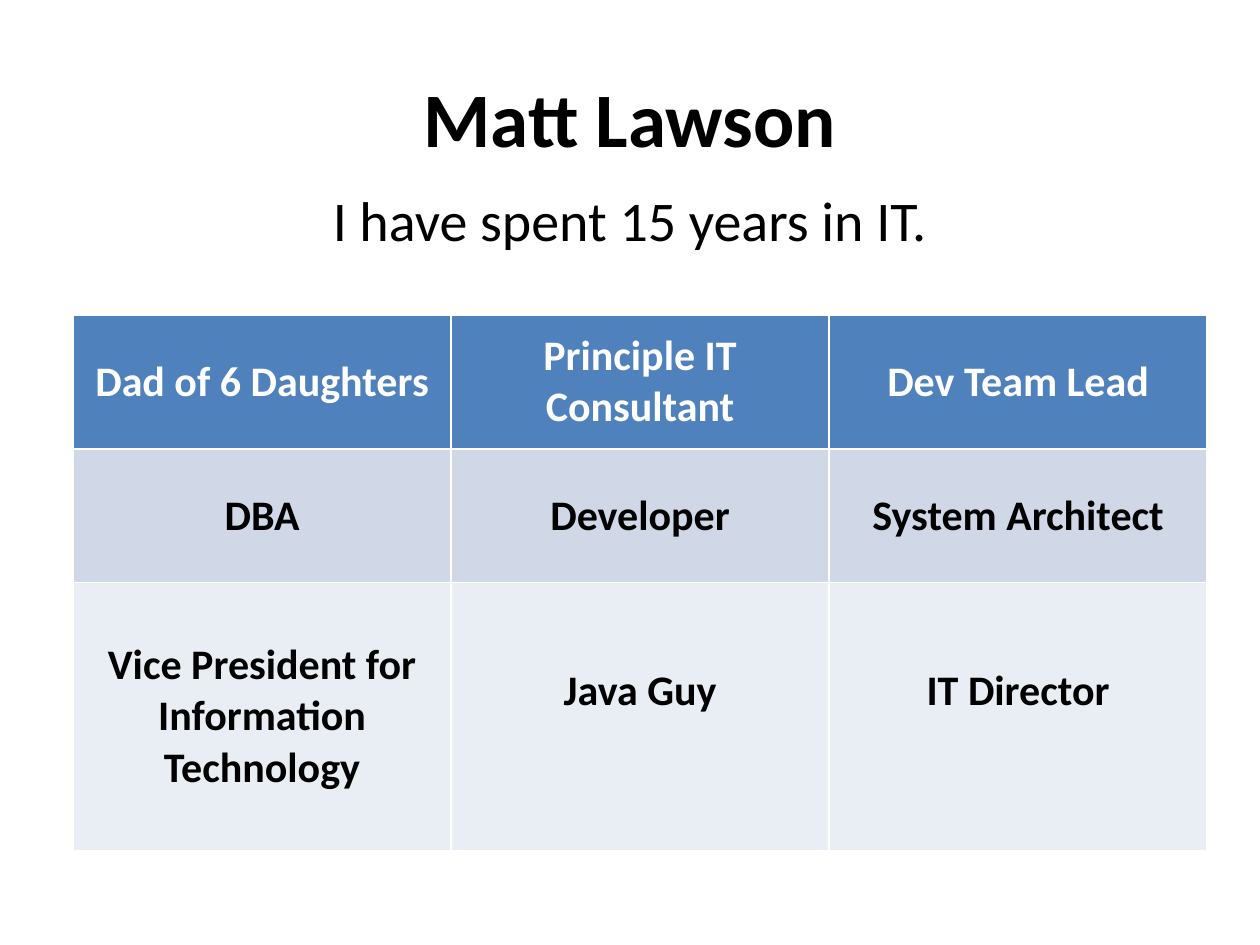
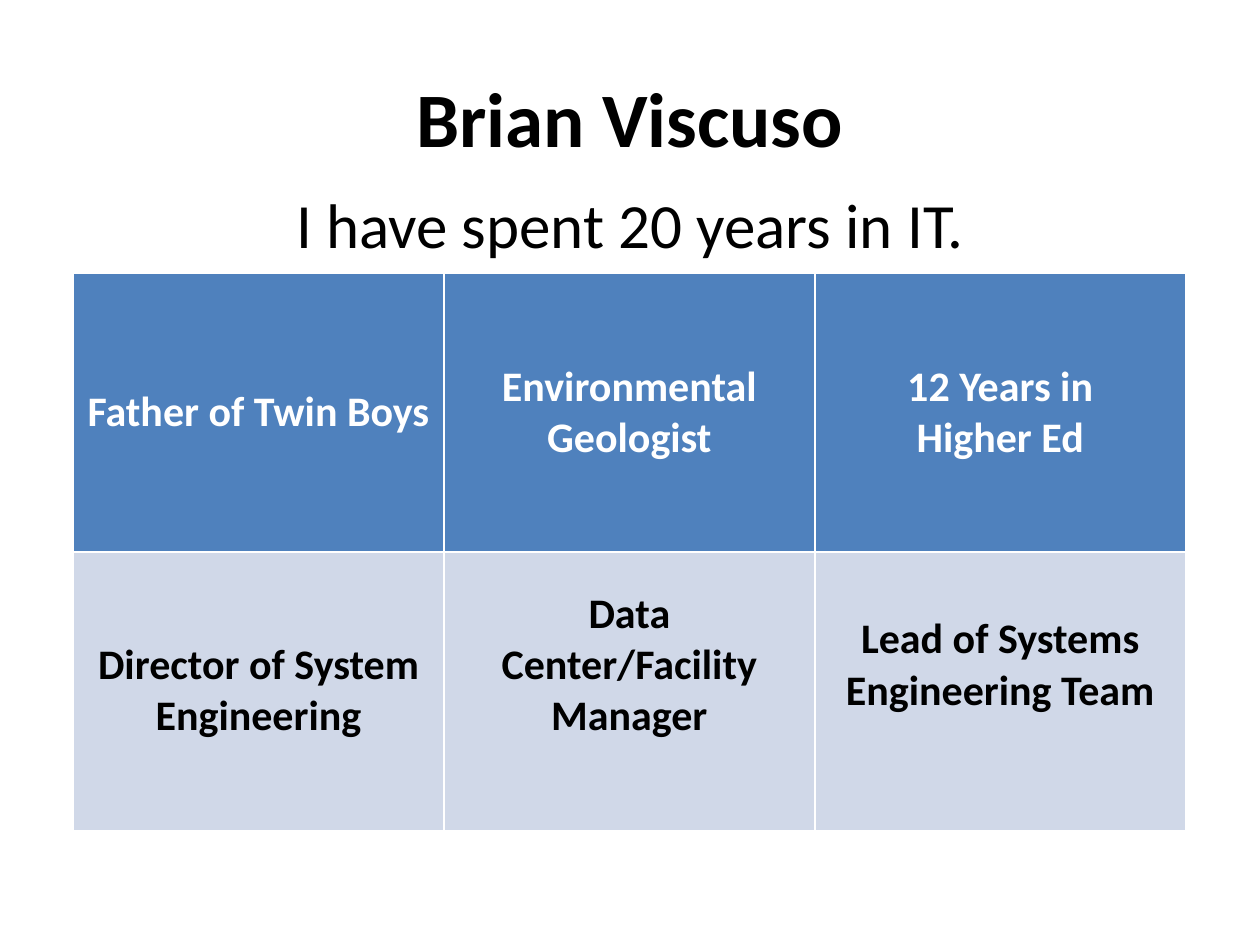
from pptx import Presentation
from pptx.dml.color import RGBColor
from pptx.enum.text import MSO_ANCHOR as Anchor, MSO_AUTO_SIZE as Fit, PP_ALIGN as Align
from pptx.oxml.ns import qn
from pptx.util import Inches, Pt

# Shared style
FONT = "Calibri"
BLACK = RGBColor(0x00, 0x00, 0x00)
WHITE = RGBColor(0xFF, 0xFF, 0xFF)
HEAD = RGBColor(0x4F, 0x81, 0xBD)
BANDS = [RGBColor(0xD0, 0xD8, 0xE8), RGBColor(0xE9, 0xED, 0xF4)]
PAD = 0.05   # usual cell margin, top and bottom
LIFT = 0.46  # bottom margin that raises a cell's text by half a line

# Each box is left, top, width, height in inches
TITLE = (0.5, 0.3, 9, 1.25)


def write(frame, text, size, color, bold=False):
    """Fill a text frame with centred, styled text."""
    frame.text = text
    for para in frame.paragraphs:
        para.alignment = Align.CENTER
        for run in para.runs:
            font = run.font
            font.name, font.size, font.bold = FONT, Pt(size), bold
            font.color.rgb = color


def place(shape, box):
    shape.left, shape.top, shape.width, shape.height = map(Inches, box)


def add_title(slide, name):
    title = slide.shapes.title
    place(title, TITLE)
    frame = title.text_frame
    frame.auto_size = Fit.NONE
    frame.vertical_anchor = Anchor.MIDDLE
    write(frame, name, 44, BLACK, bold=True)


def add_intro(slide, text, size, box):
    body = slide.placeholders[1]
    place(body, box)
    frame = body.text_frame
    frame.auto_size = Fit.NONE
    write(frame, text, size, BLACK)
    para = frame.paragraphs[0]
    para.space_before = Pt(0)
    # No bullet and no hanging indent
    props = para._p.get_or_add_pPr()
    props.set("marL", "0")
    props.set("indent", "0")
    props.append(props.makeelement(qn("a:buNone"), {}))


def add_roles(slide, rows, shares, box, lifted):
    """Table of roles; shares gives the relative row heights."""
    left, top, width, height = box
    cols = len(rows[0])
    table = slide.shapes.add_table(len(rows), cols, *map(Inches, box)).table
    for col in table.columns:
        col.width = Inches(width / cols)
    for r, (row, share) in enumerate(zip(rows, shares)):
        table.rows[r].height = Inches(height * share / sum(shares))
        for c, text in enumerate(row):
            cell = table.cell(r, c)
            cell.vertical_anchor = Anchor.MIDDLE
            cell.margin_bottom = Inches(LIFT if text in lifted else PAD)
            cell.fill.solid()
            cell.fill.fore_color.rgb = BANDS[(r - 1) % 2] if r else HEAD
            write(cell.text_frame, text, 24, BLACK if r else WHITE, bold=True)


def add_person(deck, name, intro, size, body, rows, shares, box, lifted):
    slide = deck.slides.add_slide(deck.slide_layouts[1])
    add_title(slide, name)
    add_intro(slide, intro, size, body)
    add_roles(slide, rows, shares, box, lifted)


def main():
    deck = Presentation()
    deck.slide_width, deck.slide_height = Inches(10), Inches(7.5)

    # First speaker
    add_person(
        deck, "Matt Lawson", "I have spent 15 years in IT.", 32,
        (0.5, 1.42, 9, 5.33),
        [["Dad of 6 Daughters", "Principle IT Consultant", "Dev Team Lead"],
         ["DBA", "Developer", "System Architect"],
         ["Vice President for Information Technology", "Java Guy", "IT Director"]],
        [1, 1, 2], (0.58, 2.5, 9, 4.25), {"Java Guy", "IT Director"})

    # Second speaker
    add_person(
        deck, "Brian Viscuso", "I have spent 20 years in IT.", 36,
        (0.5, 1.42, 9, 4.95),
        [["Father of Twin Boys", "Environmental Geologist", "12 Years in\nHigher Ed"],
         ["Director of System Engineering", "Data Center/Facility Manager",
          "Lead of Systems Engineering Team"]],
        [1, 1], (0.58, 2.17, 8.83, 4.42),
        {"Data Center/Facility Manager", "Lead of Systems Engineering Team"})

    deck.save("out.pptx")


if __name__ == "__main__":
    main()
